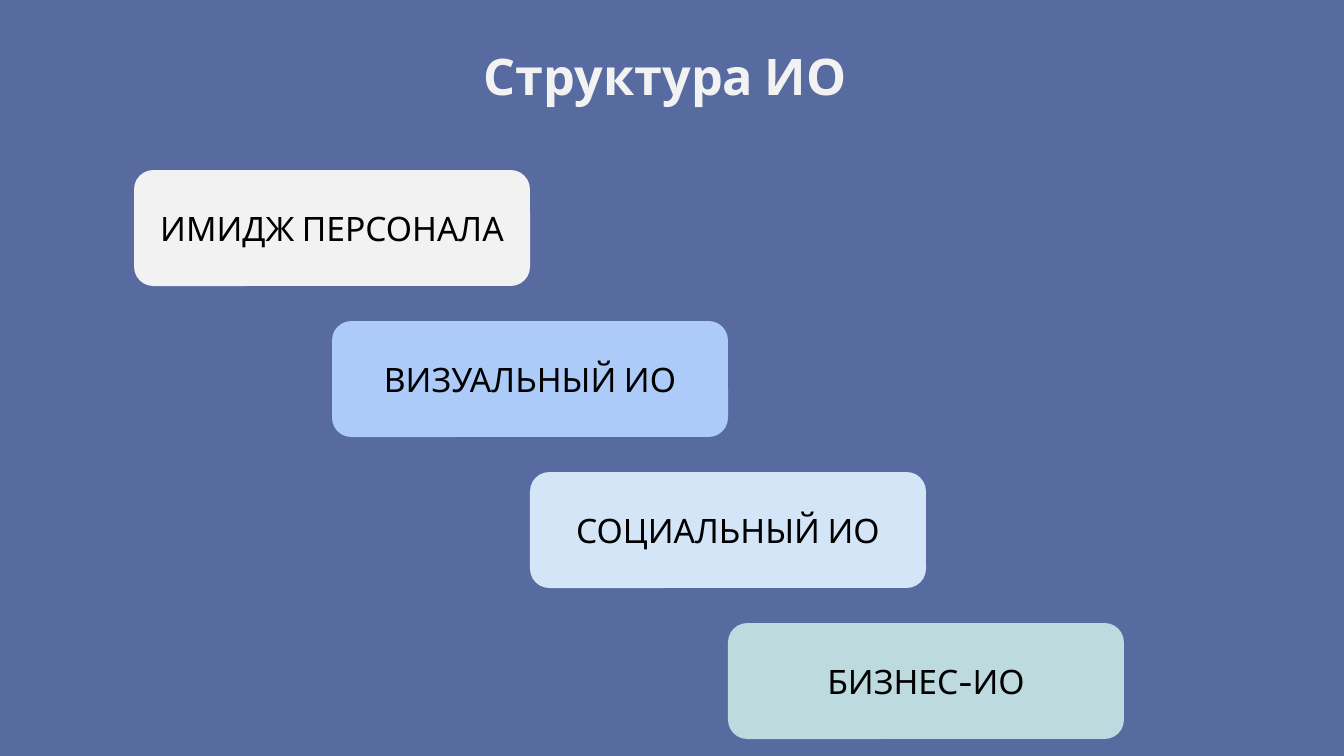
from pptx import Presentation
from pptx.dml.color import RGBColor
from pptx.enum.shapes import MSO_SHAPE
from pptx.enum.text import MSO_ANCHOR, PP_ALIGN
from pptx.util import Pt

PAGE_WIDTH, PAGE_HEIGHT = 1344, 756
SCALE = 12192000 / PAGE_WIDTH
FONT = "Cabin"
COLORS = {
    "background": "576BA0",
    "title": "F2F2F2",
    "label": "000000",
    "staff": "F2F2F2",
    "visual": "ACCBF9",
    "social": "D4E5F7",
    "business": "BDDADF",
}
STEPS = [
    ("ИМИДЖ ПЕРСОНАЛА", "staff"),
    ("ВИЗУАЛЬНЫЙ ИО", "visual"),
    ("СОЦИАЛЬНЫЙ ИО", "social"),
    ("БИЗНЕС-ИО", "business"),
]


def px(length):
    """Turn pixels into EMU."""
    return round(length * SCALE)


def color(name):
    """Look up a named colour."""
    return RGBColor.from_string(COLORS[name])


def write_text(shape, text, size, color_name, bold=False):
    """Write one centred paragraph into a shape and return it."""
    frame = shape.text_frame
    frame.text = text
    frame.word_wrap = True
    frame.vertical_anchor = MSO_ANCHOR.MIDDLE
    frame.margin_left = frame.margin_right = 0
    frame.margin_top = frame.margin_bottom = 0
    para = frame.paragraphs[0]
    para.alignment = PP_ALIGN.CENTER
    font = para.runs[0].font
    font.name = FONT
    font.size = Pt(size)
    font.bold = bold
    font.color.rgb = color(color_name)
    return para


def add_title(page, left, top, width, height):
    """Place the slide title in its box."""
    box = page.shapes.add_textbox(px(left), px(top), px(width), px(height))
    para = write_text(box, "Структура ИО", 36, "title", bold=True)
    para.line_spacing = Pt(37)


def add_staircase(page, left, top, width, height):
    """Place the steps, each shifted by half its width."""
    step_width = width * 2 // (len(STEPS) + 1)
    step_height = 116
    shift = step_width // 2
    drop = (height - step_height) // (len(STEPS) - 1)
    for index, (text, fill_name) in enumerate(STEPS):
        step = page.shapes.add_shape(
            MSO_SHAPE.ROUNDED_RECTANGLE,
            px(left + index * shift),
            px(top + index * drop),
            px(step_width),
            px(step_height),
        )
        step.shadow.inherit = False
        step.fill.solid()
        step.fill.fore_color.rgb = color(fill_name)
        step.line.fill.background()
        write_text(step, text, 24, "label")


def main():
    """Build the slide and save the deck."""
    deck = Presentation()
    deck.slide_width = px(PAGE_WIDTH)
    deck.slide_height = px(PAGE_HEIGHT)
    page = deck.slides.add_slide(deck.slide_layouts[6])
    page.background.fill.solid()
    page.background.fill.fore_color.rgb = color("background")
    add_title(page, 350, 50, 630, 59)
    add_staircase(page, 134, 170, 990, 569)
    deck.save("out.pptx")


if __name__ == "__main__":
    main()
